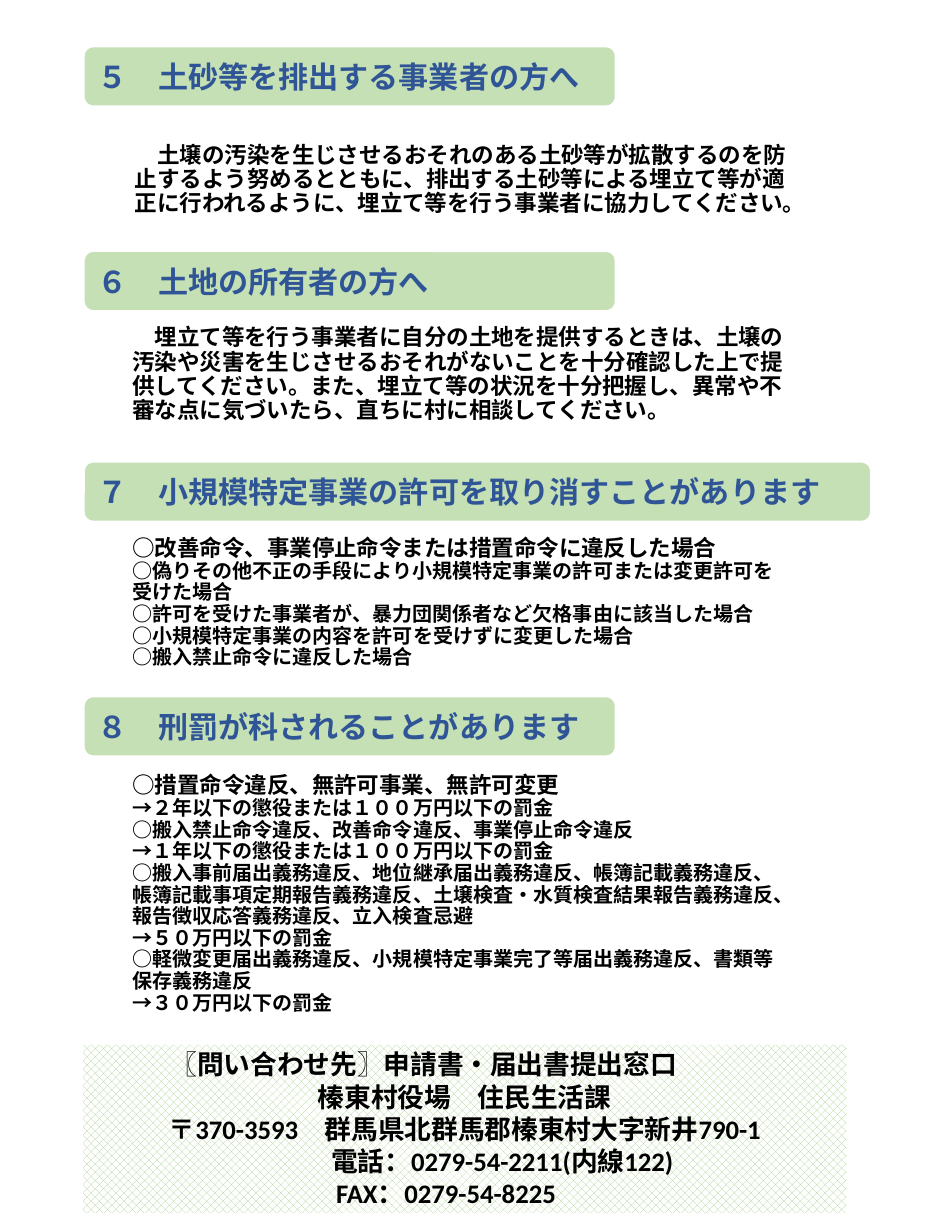
from lxml.etree import SubElement
from pptx import Presentation
from pptx.dml.color import RGBColor
from pptx.enum.dml import MSO_PATTERN
from pptx.enum.shapes import MSO_SHAPE as Shape
from pptx.enum.text import MSO_ANCHOR as Anchor, MSO_AUTO_SIZE as AutoSize, PP_ALIGN as Align
from pptx.oxml.ns import qn
from pptx.util import Inches, Pt

# Content: heading, top, width
HEADINGS = [
    ("５　土砂等を排出する事業者の方へ", 0.38, 4.43),
    ("６　土地の所有者の方へ", 2.08, 4.43),
    ("７　小規模特定事業の許可を取り消すことがあります", 3.83, 6.55),
    ("８　刑罰が科されることがあります", 5.78, 4.43),
]
# Left, top, height, paragraphs
SECTIONS = [
    (1.02, 0.97, 0.88, [
        "　土壌の汚染を生じさせるおそれのある土砂等が拡散するのを防止するよう努めるとともに、"
        "排出する土砂等による埋立て等が適正に行われるように、埋立て等を行う事業者に協力してください。",
    ]),
    (1, 2.69, 0.88, [
        "　埋立て等を行う事業者に自分の土地を提供するときは、土壌の汚染や災害を生じさせるおそれが"
        "ないことを十分確認した上で提供してください。また、埋立て等の状況を十分把握し、"
        "異常や不審な点に気づいたら、直ちに村に相談してください。",
    ]),
    (1, 4.37, 1.24, [
        "○改善命令、事業停止命令または措置命令に違反した場合",
        "○偽りその他不正の手段により小規模特定事業の許可または変更許可を受けた場合",
        "○許可を受けた事業者が、暴力団関係者など欠格事由に該当した場合",
        "○小規模特定事業の内容を許可を受けずに変更した場合",
        "○搬入禁止命令に違反した場合",
    ]),
    (1, 6.29, 2.19, [
        "○措置命令違反、無許可事業、無許可変更",
        "→２年以下の懲役または１００万円以下の罰金",
        "○搬入禁止命令違反、改善命令違反、事業停止命令違反",
        "→１年以下の懲役または１００万円以下の罰金",
        "○搬入事前届出義務違反、地位継承届出義務違反、帳簿記載義務違反、",
        "帳簿記載事項定期報告義務違反、土壌検査・水質検査結果報告義務違反、",
        "報告徴収応答義務違反、立入検査忌避",
        "→５０万円以下の罰金",
        "○軽微変更届出義務違反、小規模特定事業完了等届出義務違反、書類等保存義務違反",
        "→３０万円以下の罰金",
    ]),
]
# Text, alignment, indent in points
CONTACT = [
    ("〖問い合わせ先〗申請書・届出書提出窓口", Align.LEFT, 48),
    ("榛東村役場　住民生活課", Align.CENTER, 0),
    ("〒370-3593　群馬県北群馬郡榛東村大字新井790-1", Align.CENTER, 0),
    ("電話：0279-54-2211(内線122)", Align.LEFT, 144),
    ("FAX：0279-54-8225", Align.LEFT, 147),
]

CM_PER_INCH = 2.54
PAGE_CM = (20, 26)
LATIN, JAPANESE = "Calibri", "Noto Sans CJK JP"
BLACK, WHITE = RGBColor(0, 0, 0), RGBColor(255, 255, 255)
BLUE, BAND_GREEN = RGBColor(0x2F, 0x55, 0x97), RGBColor(0xC5, 0xE0, 0xB4)
HATCH_GREEN = RGBColor(0xA9, 0xD1, 0x8E)


def place(shape, *box):
    for side, length in zip(("left", "top", "width", "height"), box):
        setattr(shape, side, Inches(length))


def add_panel(kind, *box):
    panel = page.shapes.add_shape(kind, *map(Inches, box))
    panel.shadow.inherit = False
    return panel


def set_frame(shape, anchor, left, right, inset_y):
    frame = shape.text_frame
    settings = {
        "word_wrap": True, "auto_size": AutoSize.NONE, "vertical_anchor": anchor,
        "margin_left": Inches(left), "margin_right": Inches(right),
        "margin_top": Inches(inset_y), "margin_bottom": Inches(inset_y),
    }
    for name, value in settings.items():
        setattr(frame, name, value)
    return frame


def write(paragraph, text, size, color, font, asian=None, align=Align.LEFT, spacing=1.0, indent=0):
    layout = {"alignment": align, "line_spacing": spacing,
              "space_before": Pt(0), "space_after": Pt(0)}
    for name, value in layout.items():
        setattr(paragraph, name, value)
    props = paragraph._p.get_or_add_pPr()
    props.set("marL", str(Pt(indent)))
    props.set("indent", "0")
    SubElement(props, qn("a:buNone"))
    run = paragraph.add_run()
    run.text = text
    for name, value in {"size": Pt(size), "bold": True, "name": font}.items():
        setattr(run.font, name, value)
    run.font.color.rgb = color
    if asian:
        SubElement(run._r.get_or_add_rPr(), qn("a:ea")).set("typeface", asian)


def paragraphs(frame, count):
    return [frame.paragraphs[0]] + [frame.add_paragraph() for _ in range(count - 1)]


deck = Presentation()
deck.slide_width, deck.slide_height = (Inches(side / CM_PER_INCH) for side in PAGE_CM)
deck.element.find(qn("p:sldSz")).attrib.pop("type", None)
page = deck.slides.add_slide(deck.slide_layouts[3])
disposal, cancellations, penalties = page.placeholders
landowners = page.shapes.add_textbox(0, 0, 0, 0)

# Section texts
for section, (left, top, height, lines) in zip(
        (disposal, landowners, cancellations, penalties), SECTIONS):
    place(section, left, top, 5.62, height)
    frame = set_frame(section, Anchor.BOTTOM, 0.1, 0.08, 0.05)
    for number, (paragraph, line) in enumerate(zip(paragraphs(frame, len(lines)), lines)):
        write(paragraph, line, 12 if number else 13.5, BLACK, JAPANESE, JAPANESE, spacing=0.9)

# Heading bands
for heading, top, width in HEADINGS:
    band = add_panel(Shape.ROUNDED_RECTANGLE, 0.69, top, width, 0.51)
    band.fill.solid()
    band.fill.fore_color.rgb = BAND_GREEN
    band.line.color.rgb = WHITE
    band.line.width = Pt(2)
    frame = set_frame(band, Anchor.MIDDLE, 0.1, 0.1, 0.05)
    write(frame.paragraphs[0], heading, 18, BLUE, LATIN, JAPANESE)

# Contact panel
contact = add_panel(Shape.RECTANGLE, 0.69, 8.68, 6.34, 1.4)
contact.line.fill.background()
contact.fill.patterned()
contact.fill.pattern = MSO_PATTERN.PERCENT_50
contact.fill.fore_color.rgb = HATCH_GREEN
contact.fill.back_color.rgb = WHITE
frame = set_frame(contact, Anchor.TOP, 0.06, 0.06, 0.03)
for paragraph, (line, align, indent) in zip(paragraphs(frame, len(CONTACT)), CONTACT):
    write(paragraph, line, 16, BLACK, LATIN, align=align, indent=indent)

deck.save("out.pptx")
